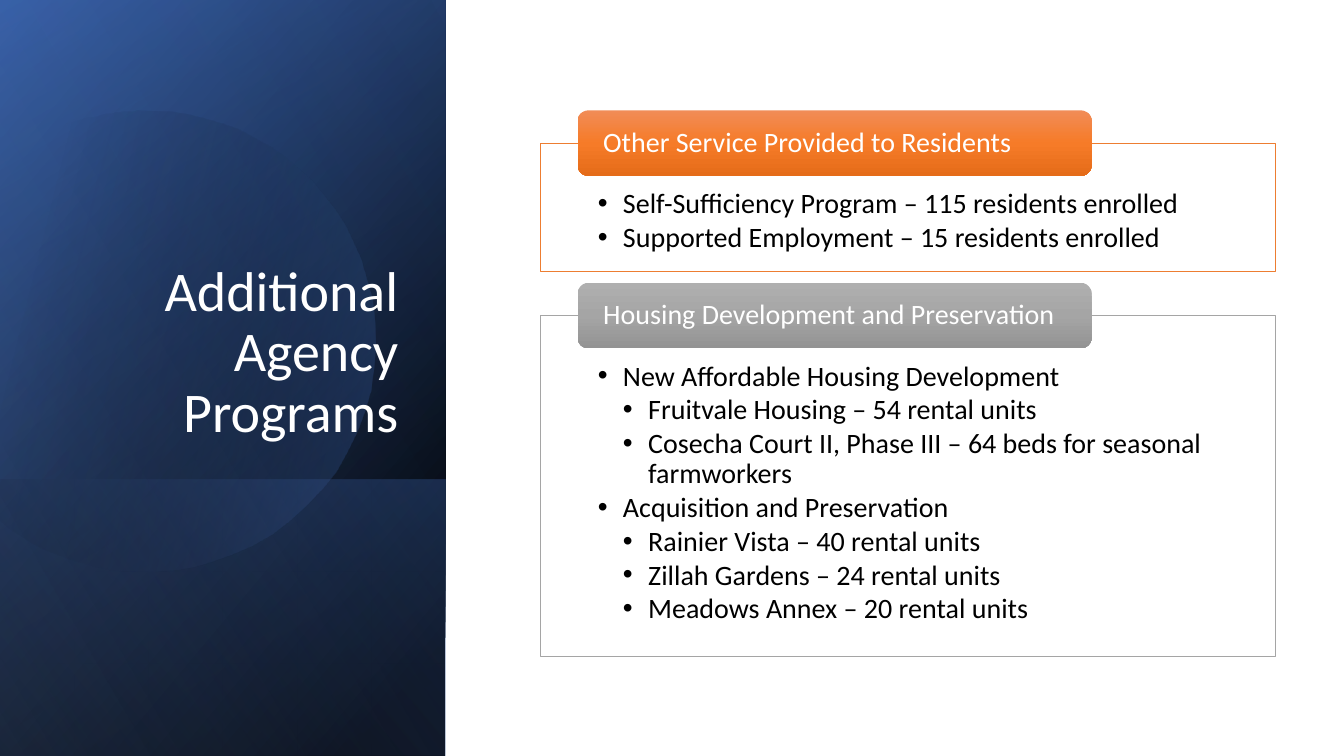
import math
from lxml import etree
from pptx import Presentation, util as u
from pptx.dml.color import RGBColor
from pptx.enum import shapes, text
from pptx.oxml import ns

Pt = u.Pt
FONT = "Calibri"
HEX = {
    "white": "FFFFFF", "black": "000000", "navy": "2F5597", "blue": "4472C4",
    "sky": "8FAADC", "orange": "ED7D31", "gray": "A5A5A5",
}
TITLE = "Additional Agency Programs"

# Stops are (position %, colour, opacity %).
SIDE = (0, 0, 318.2, 540)
LOW = (0, 342.7, 318.2, 197.3)
BASE = (SIDE, [(8, "black", 100), (100, "navy", 100)], 50)
GLOW = (SIDE, [(0, "black", 0), (99, "blue", 46)], 30)
FOOT = (LOW, [(2, "blue", 29), (100, "black", 30)], 130)
SHEEN = (SIDE, [(0, "black", 0), (99, "sky", 11)], 120)

# The disc in slide points: a start, then curves (three points) and lines (one).
DISC = [
    [(107.3, 79.2)],
    [(177.1, 80.6), (241.2, 127.4), (261.4, 198)],
    [(286.6, 285.8), (236.2, 376.6), (149, 401.8)],
    [(94.3, 417.6), (38.2, 403.9), (-2.2, 370.1)],
    [(-10.8, 362.2)],
    [(-10.8, 126)],
    [(0, 115.9)],
    [(16.6, 102.2), (36, 92.2), (57.6, 85.7)],
    [(74.2, 81.4), (90.7, 79.2), (107.3, 79.2)],
]
DISC_MID = (114.1, 240.8)
DISC_TURN = -16.1
DISC_FILL = ([(29, "black", 0), (100, "blue", 43)], 30)

PANELS = [
    {
        "head": "Other Service Provided to Residents",
        "top": 102.2, "high": 91.4, "line": "orange",
        "shade": ["F18C57", "F67B28", "E56C19"],
        "rows": [
            (0, "Self-Sufficiency Program – 115 residents enrolled"),
            (0, "Supported Employment – 15 residents enrolled"),
        ],
    },
    {
        "head": "Housing Development and Preservation",
        "top": 225.4, "high": 243.4, "line": "gray",
        "shade": ["AFAFAF", "A5A5A5", "939393"],
        "rows": [
            (0, "New Affordable Housing Development"),
            (1, "Fruitvale Housing – 54 rental units"),
            (1, "Cosecha Court II, Phase III – 64 beds for seasonal farmworkers"),
            (0, "Acquisition and Preservation"),
            (1, "Rainier Vista – 40 rental units"),
            (1, "Zillah Gardens – 24 rental units"),
            (1, "Meadows Annex – 20 rental units"),
        ],
    },
]
BOX_X, BOX_W = 386, 525
HEAD_X, HEAD_W, HEAD_H = 412.6, 367.2, 46.8
INDENT = 18


def color(name):
    return RGBColor.from_string(HEX[name])


def sub(node, tag, **attrs):
    return etree.SubElement(node, ns.qn(tag), {k: str(v) for k, v in attrs.items()})


def blend(shape, stops, angle):
    """Fill with a linear gradient that allows see-through stops."""
    props = shape.element.spPr
    grad = etree.Element(ns.qn("a:gradFill"), rotWithShape="1")
    stack = sub(grad, "a:gsLst")
    for pos, name, alpha in stops:
        stop = sub(stack, "a:gs", pos=pos * 1000)
        tint = sub(stop, "a:srgbClr", val=HEX.get(name, name))
        if alpha < 100:
            sub(tint, "a:alpha", val=alpha * 1000)
    sub(grad, "a:lin", ang=angle * 60000, scaled=0)
    for old in props.findall(ns.qn("a:solidFill")):
        props.remove(old)
    props.insert(2, grad)
    shape.line.fill.background()
    shape.shadow.inherit = False


def add(slide, kind, x, y, w, h):
    return slide.shapes.add_shape(kind, Pt(x), Pt(y), Pt(w), Pt(h))


def layer(slide, area, stops, angle):
    """Add a mirrored rectangle, turned a quarter, that covers the area."""
    x, y, w, h = area
    left, top = x + (w - h) / 2, y + (h - w) / 2
    shape = add(slide, shapes.MSO_SHAPE.RECTANGLE, left, top, h, w)
    shape.rotation = 90
    shape.element.spPr.find(ns.qn("a:xfrm")).set("flipH", "1")
    blend(shape, stops, angle)


def curve(start, one, two, end, steps=16):
    for i in range(1, steps + 1):
        t = i / steps
        s = 1 - t
        yield tuple(s**3 * a + 3 * s * s * t * b + 3 * s * t * t * c + t**3 * d
                    for a, b, c, d in zip(start, one, two, end))


def turn(point):
    """Undo the disc's rotation, so that it can be set on the shape."""
    angle = math.radians(-DISC_TURN)
    dx, dy = point[0] - DISC_MID[0], point[1] - DISC_MID[1]
    return (DISC_MID[0] + dx * math.cos(angle) - dy * math.sin(angle),
            DISC_MID[1] + dx * math.sin(angle) + dy * math.cos(angle))


def disc(slide):
    dots = list(DISC[0])
    for part in DISC[1:]:
        dots += curve(dots[-1], *part) if len(part) == 3 else part
    dots = [turn(dot) for dot in dots]
    pen = slide.shapes.build_freeform(*dots[0], scale=Pt(1))
    pen.add_line_segments(dots[1:], close=True)
    shape = pen.convert_to_shape()
    shape.rotation = DISC_TURN
    blend(shape, *DISC_FILL)


def setup(shape, anchor, insets):
    frame = shape.text_frame
    frame.word_wrap = True
    frame.vertical_anchor = anchor
    (frame.margin_left, frame.margin_top,
     frame.margin_right, frame.margin_bottom) = map(Pt, insets)
    return frame


def write(para, words, size, name, align):
    para.alignment = align
    para.line_spacing = 0.9
    run = para.add_run()
    run.text = words
    run.font.size = Pt(size)
    run.font.name = FONT
    run.font.color.rgb = color(name)


def bullet(para, level):
    para.level = level
    para.space_after = Pt(2.5)
    props = para._p.get_or_add_pPr()
    props.set("marL", str(Pt(INDENT * (level + 1))))
    props.set("indent", str(-Pt(INDENT)))
    sub(props, "a:buFont", typeface="Arial")
    sub(props, "a:buChar", char="•")


def panel(slide, item):
    left = text.PP_ALIGN.LEFT
    box = add(slide, shapes.MSO_SHAPE.RECTANGLE, BOX_X, item["top"], BOX_W, item["high"])
    box.fill.solid()
    box.fill.fore_color.rgb = color("white")
    box.line.color.rgb = color(item["line"])
    box.line.width = Pt(0.5)
    box.shadow.inherit = False
    frame = setup(box, text.MSO_ANCHOR.TOP, (41, 33.1, 41, 11.5))
    for i, (level, words) in enumerate(item["rows"]):
        para = frame.add_paragraph() if i else frame.paragraphs[0]
        write(para, words, 20, "black", left)
        bullet(para, level)

    head = add(slide, shapes.MSO_SHAPE.ROUNDED_RECTANGLE,
               HEAD_X, item["top"] - HEAD_H / 2, HEAD_W, HEAD_H)
    blend(head, [(i * 50, tone, 100) for i, tone in enumerate(item["shade"])], 90)
    frame = setup(head, text.MSO_ANCHOR.MIDDLE, (16, 0, 16, 0))
    write(frame.paragraphs[0], item["head"], 20, "white", left)


def main():
    deck = Presentation()
    deck.slide_width, deck.slide_height = Pt(960), Pt(540)
    slide = deck.slides.add_slide(deck.slide_layouts[6])
    for part in (BASE, GLOW, FOOT):
        layer(slide, *part)
    disc(slide)
    layer(slide, *SHEEN)
    title = slide.shapes.add_textbox(Pt(46), Pt(132.5), Pt(245.5), Pt(188.6))
    frame = setup(title, text.MSO_ANCHOR.BOTTOM, (7.2, 3.6, 7.2, 3.6))
    write(frame.paragraphs[0], TITLE, 40, "white", text.PP_ALIGN.RIGHT)
    for item in PANELS:
        panel(slide, item)
    deck.save("out.pptx")


if __name__ == "__main__":
    main()
